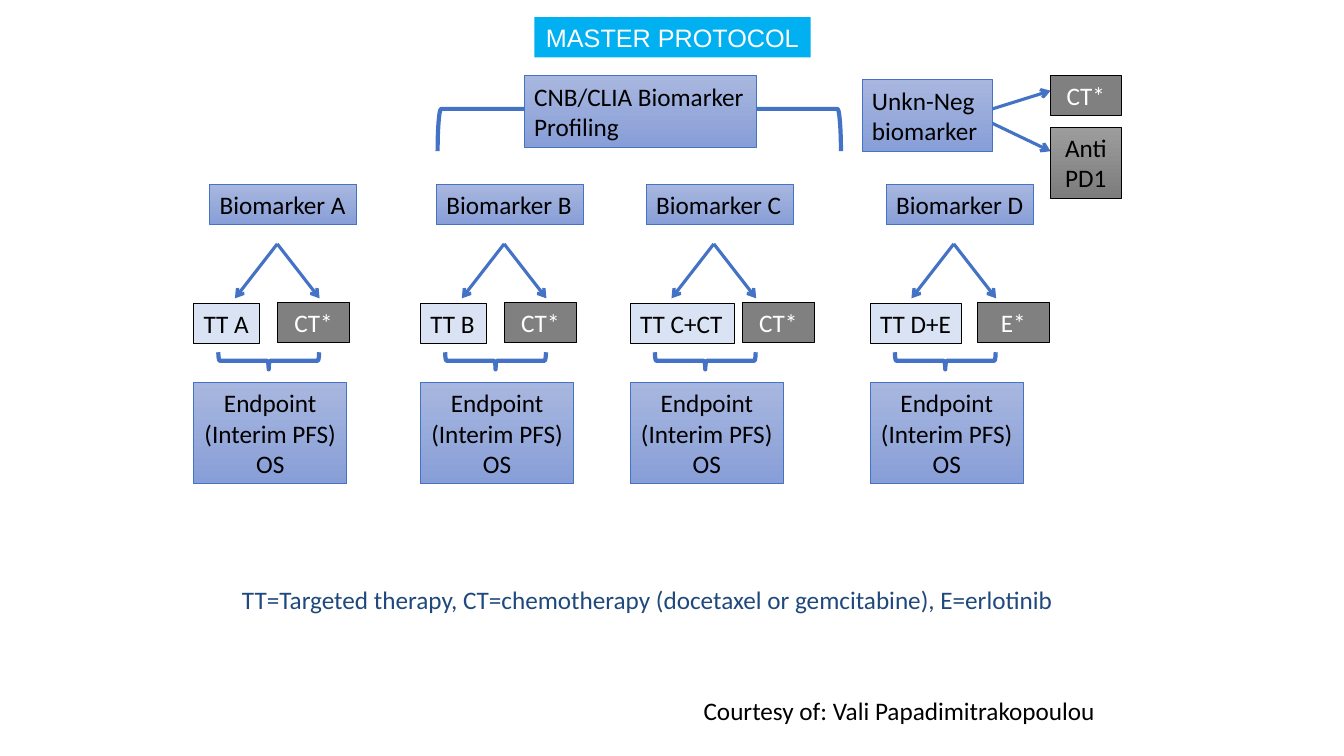
import pptx
import pptx.util
import pptx.dml.color
import pptx.enum.shapes
import pptx.enum.text
import pptx.oxml.ns
import lxml.etree

Inches = pptx.util.Inches
Pt = pptx.util.Pt
RGBColor = pptx.dml.color.RGBColor
MSO_SHAPE = pptx.enum.shapes.MSO_SHAPE
PP_ALIGN = pptx.enum.text.PP_ALIGN
qn = pptx.oxml.ns.qn

BLACK = RGBColor(0x00, 0x00, 0x00)
WHITE = RGBColor(0xFF, 0xFF, 0xFF)
BLUE = RGBColor(0x44, 0x72, 0xC4)
NAVY = RGBColor(0x1F, 0x49, 0x7D)
CYAN = RGBColor(0x00, 0xB0, 0xF0)
PALE = RGBColor(0xDA, 0xE3, 0xF3)
GRAY = RGBColor(0x80, 0x80, 0x80)
BLUE_FADE = [RGBColor(0xA8, 0xB7, 0xDF), RGBColor(0x88, 0x9E, 0xD7)]
GRAY_FADE = [RGBColor(0x9D, 0x9D, 0x9D), RGBColor(0x7C, 0x7C, 0x7C)]

TITLE = "MASTER PROTOCOL"
PROFILING = "CNB/CLIA Biomarker\nProfiling"
UNKNOWN = "Unkn-Neg\nbiomarker"
ENDPOINT = "Endpoint\n(Interim PFS)\nOS"
LEGEND = "TT=Targeted therapy, CT=chemotherapy (docetaxel or gemcitabine), E=erlotinib"
CREDIT = "Courtesy of: Vali Papadimitrakopoulou"
ARMS = [
    (1.92, "Biomarker A", "TT A", 0.65, "CT*", 2.75),
    (4.17, "Biomarker Β", "TT B", 0.65, "CT*", 5),
    (6.25, "Biomarker C", "TT C+CT", 1.03, "CT*", 7.36),
    (8.63, "Biomarker D", "TT D+E", 0.91, "E*", 9.69),
]

LEFT, CENTER = PP_ALIGN.LEFT, PP_ALIGN.CENTER
ROW = 0.4
DOUBLE_ROW = 0.71

prs = pptx.Presentation()
prs.slide_width = Inches(13.33)
prs.slide_height = Inches(7.5)
slide = prs.slides.add_slide(prs.slide_layouts[6])


def write(sp, text, color, align, font="Calibri", wrap=False):
    tf = sp.text_frame
    tf.text = text
    tf.word_wrap = wrap
    for p in tf.paragraphs:
        p.alignment = align
        for r in p.runs:
            r.font.name = font
            r.font.size = Pt(18)
            r.font.color.rgb = color


def add_box(x, y, w, h, text, fill, line=BLACK, color=BLACK, align=CENTER, font="Calibri"):
    sp = slide.shapes.add_shape(MSO_SHAPE.RECTANGLE, Inches(x), Inches(y), Inches(w), Inches(h))
    sp.shadow.inherit = False
    if isinstance(fill, list):
        sp.fill.gradient()
        sp.fill.gradient_angle = 270
        for stop, shade in zip(sp.fill.gradient_stops, fill):
            stop.color.rgb = shade
    else:
        sp.fill.solid()
        sp.fill.fore_color.rgb = fill
    if line is None:
        sp.line.fill.background()
    else:
        sp.line.color.rgb = line
        sp.line.width = Pt(0.5)
    write(sp, text, color, align, font)


def add_blue_box(x, y, w, h, text, align=LEFT):
    add_box(x, y, w, h, text, BLUE_FADE, BLUE, align=align)


def add_label(x, y, w, h, text, color, align, wrap):
    sp = slide.shapes.add_textbox(Inches(x), Inches(y), Inches(w), Inches(h))
    write(sp, text, color, align, wrap=wrap)


def add_bracket(kind, x, y, w, h):
    sp = slide.shapes.add_shape(kind, Inches(x), Inches(y), Inches(w), Inches(h))
    sp.shadow.inherit = False
    sp.rotation = 90
    sp.fill.background()
    sp.line.color.rgb = BLUE
    sp.line.width = Pt(3)


def add_arrow(x1, y1, x2, y2):
    cn = slide.shapes.add_connector(
        pptx.enum.shapes.MSO_CONNECTOR.STRAIGHT, Inches(x1), Inches(y1), Inches(x2), Inches(y2))
    cn.line.color.rgb = BLUE
    cn.line.width = Pt(2.25)
    lxml.etree.SubElement(cn.get_or_add_ln(), qn("a:tailEnd"), type="arrow")
    lxml.etree.SubElement(cn._element.spPr, qn("a:effectLst"))


add_bracket(MSO_SHAPE.LEFT_BRACKET, 6.13, -0.71, 0.42, 4)
add_box(5.3, 0.17, 2.74, ROW, TITLE, CYAN, None, WHITE, font="Arial")
add_blue_box(5.2, 0.75, 2.3, DOUBLE_ROW, PROFILING)

add_arrow(9.62, 1.15, 10.42, 0.9)
add_arrow(9.69, 1.15, 10.42, 1.5)
add_blue_box(8.55, 0.79, 1.29, DOUBLE_ROW, UNKNOWN)
add_box(10.42, 0.75, 0.7, ROW, "CT*", GRAY, color=WHITE)
add_box(10.42, 1.26, 0.7, DOUBLE_ROW, "Anti\vPD1", GRAY_FADE)

for x, biomarker, therapy, therapy_width, control, control_x in ARMS:
    apex = x + 0.83
    add_blue_box(x + 0.16, 1.83, 1.46, ROW, biomarker)
    add_box(x, 3.01, therapy_width, ROW, therapy, PALE, align=LEFT)
    add_box(control_x, 3, 0.72, ROW, control, GRAY, color=WHITE)
    for side in (1, -1):
        add_arrow(apex, 2.42, apex + side * 0.42, 2.96)
    add_bracket(MSO_SHAPE.RIGHT_BRACE, apex - 0.17, 3.08, 0.17, 1)
    add_blue_box(x, 3.79, 1.52, 1.01, ENDPOINT, CENTER)

add_label(2.25, 5.75, 8.34, ROW, LEGEND, NAVY, CENTER, False)
add_label(6.88, 6.85, 4.54, DOUBLE_ROW, CREDIT, BLACK, LEFT, True)

prs.save("out.pptx")
